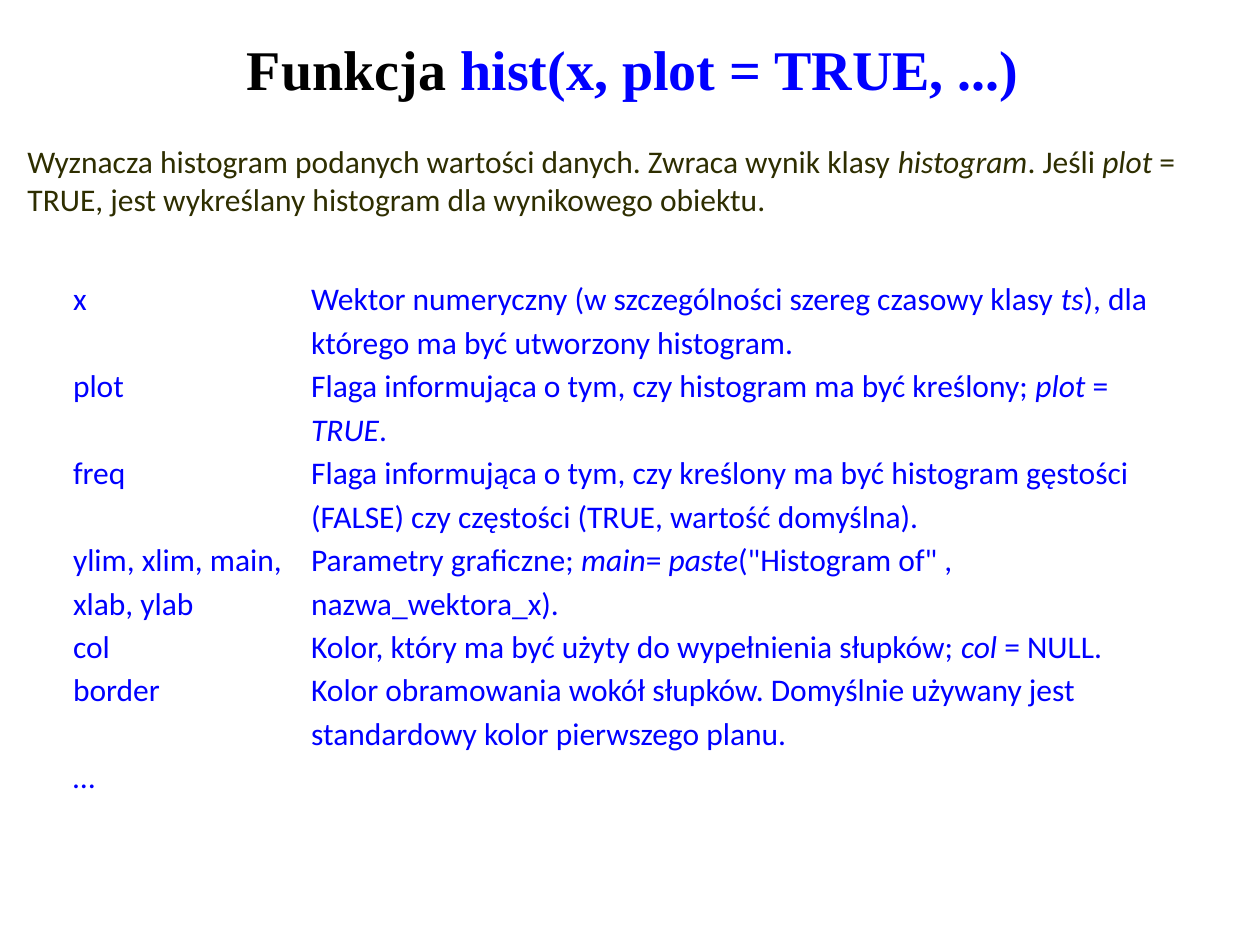
from dataclasses import dataclass

from pptx import Presentation
from pptx.dml.color import RGBColor
from pptx.enum.text import MSO_ANCHOR, PP_ALIGN
from pptx.util import Inches, Pt

MIDDLE = MSO_ANCHOR.MIDDLE
CENTER = PP_ALIGN.CENTER
BLACK = RGBColor(0x00, 0x00, 0x00)
BLUE = RGBColor(0x00, 0x00, 0xFF)
OLIVE = RGBColor(0x2E, 0x2E, 0x00)
WHITE = RGBColor(0xFF, 0xFF, 0xFF)
BODY_FONT = "Calibri"
TITLE_FONT = "Times New Roman"
BODY_SIZE = 18
LINE_HEIGHT = 0.345
ITALIC_MARK = "*"


@dataclass(frozen=True)
class Argument:
    name: str
    meaning: str
    lines: int = 2


ARGUMENTS = [
    Argument("x", "Wektor numeryczny (w szczególności szereg czasowy klasy *ts*), "
                  "dla którego ma być utworzony histogram."),
    Argument("plot", "Flaga informująca o tym, czy histogram ma być kreślony; "
                     "*plot* = *TRUE*."),
    Argument("freq", "Flaga informująca o tym, czy kreślony ma być histogram gęstości "
                     "(FALSE) czy częstości (TRUE, wartość domyślna)."),
    Argument("ylim, xlim, main, xlab, ylab",
             'Parametry graficzne; *main*= *paste*("Histogram of" , nazwa_wektora_x).'),
    Argument("col", "Kolor, który ma być użyty do wypełnienia słupków; *col* = NULL.", 1),
    Argument("border", "Kolor obramowania wokół słupków. Domyślnie używany jest "
                       "standardowy kolor pierwszego planu."),
    Argument("…", "", 1),
]


def add_run(paragraph, text: str, font_name: str, size: int, color: RGBColor,
            bold: bool = False, italic: bool = False) -> None:
    run = paragraph.add_run()
    run.text = text
    font = run.font
    font.name, font.size, font.bold, font.italic = font_name, Pt(size), bold, italic
    font.color.rgb = color


def write_body(paragraph, marked_text: str, color: RGBColor) -> None:
    paragraph.font.size = Pt(BODY_SIZE)
    for index, part in enumerate(marked_text.split(ITALIC_MARK)):
        if part:
            add_run(paragraph, part, BODY_FONT, BODY_SIZE, color, italic=index % 2 == 1)


def add_paragraph_box(slide, left: float, top: float, width: float, height: float):
    frame = slide.shapes.add_textbox(
        Inches(left), Inches(top), Inches(width), Inches(height)).text_frame
    frame.word_wrap = True
    frame.vertical_anchor = MIDDLE
    return frame.paragraphs[0]


def add_argument_table(slide, arguments: list[Argument]) -> None:
    height = LINE_HEIGHT * sum(argument.lines for argument in arguments)
    table = slide.shapes.add_table(len(arguments), 2, Inches(0.51), Inches(2.18),
                                   Inches(8.74), Inches(height)).table
    table.first_row = False
    table.horz_banding = False
    table.columns[0].width = Inches(1.89)
    table.columns[1].width = Inches(6.85)
    for row, argument in zip(table.rows, arguments):
        row.height = Inches(LINE_HEIGHT * argument.lines)
        for cell, text in zip(row.cells, (argument.name, argument.meaning)):
            cell.fill.background()
            cell.margin_left = cell.margin_right = Inches(0.07)
            cell.margin_top = cell.margin_bottom = 0
            paragraph = cell.text_frame.paragraphs[0]
            paragraph.line_spacing = 1.15
            write_body(paragraph, text, BLUE)


def main() -> None:
    presentation = Presentation()
    presentation.slide_width = Inches(10)
    presentation.slide_height = Inches(7.5)
    slide = presentation.slides.add_slide(presentation.slide_layouts[6])
    slide.background.fill.solid()
    slide.background.fill.fore_color.rgb = WHITE

    title = add_paragraph_box(slide, 0.2, 0.24, 9.65, 0.6)
    title.alignment = CENTER
    add_run(title, "Funkcja ", TITLE_FONT, 32, BLACK, bold=True)
    add_run(title, "hist(x, plot = TRUE, ...)", TITLE_FONT, 32, BLUE, bold=True)

    summary = add_paragraph_box(slide, 0.12, 1.07, 9.8, 0.71)
    write_body(summary, "Wyznacza histogram podanych wartości danych. Zwraca wynik klasy "
                        "*histogram*. Jeśli *plot* = TRUE, jest wykreślany histogram "
                        "dla wynikowego obiektu.", OLIVE)

    add_argument_table(slide, ARGUMENTS)
    presentation.save("out.pptx")


if __name__ == "__main__":
    main()
